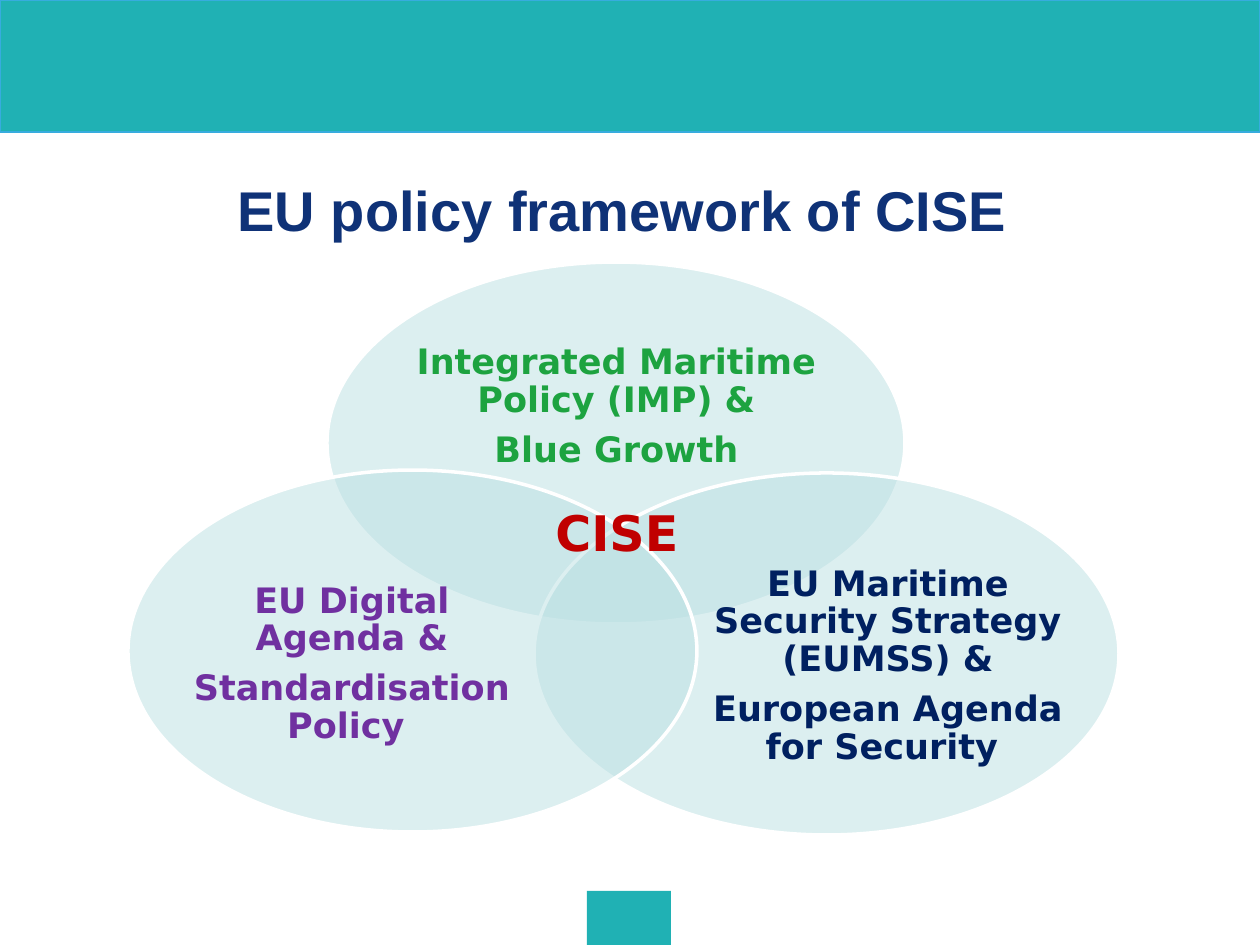
from dataclasses import dataclass

from lxml.etree import SubElement
from pptx import Presentation
from pptx.dml.color import RGBColor
from pptx.enum.shapes import MSO_SHAPE as Shape
from pptx.enum.text import MSO_ANCHOR as Anchor, PP_ALIGN as Align
from pptx.oxml.ns import qn
from pptx.util import Emu, Pt

EMU_PER_PX = 914400 / 126
TEAL = "20B1B4"
LABEL_FONT = "DejaVu Sans"


@dataclass(frozen=True)
class Box:
    left: int
    top: int
    width: int
    height: int

    def emu(self) -> tuple[Emu, ...]:
        return tuple(px(v) for v in (self.left, self.top, self.width, self.height))


@dataclass(frozen=True)
class Policy:
    ellipse: Box
    label: Box
    lines: tuple[str, ...]
    color: str


POLICIES = (
    Policy(Box(327, 262, 578, 362), Box(404, 326, 425, 163),
           ("Integrated Maritime Policy (IMP) &", "Blue Growth"), "1DA340"),
    Policy(Box(534, 473, 585, 362), Box(713, 567, 350, 199),
           ("EU Maritime Security Strategy (EUMSS) &", "European Agenda for Security "), "002060"),
    Policy(Box(128, 470, 569, 362), Box(181, 565, 342, 199),
           ("EU Digital Agenda &", "Standardisation Policy "), "7030A0"),
)


def px(n: int) -> Emu:
    return Emu(round(n * EMU_PER_PX))


def rgb(color: str) -> RGBColor:
    return RGBColor.from_string(color)


def style(p, font: str, size: int, color: str) -> None:
    for r in p.runs:
        r.font.name = font
        r.font.size = Pt(size)
        r.font.bold = True
        r.font.color.rgb = rgb(color)


def add_filled(s, kind: Shape, box: Box, fill: str, line: str = "", width: float = 0):
    sp = s.shapes.add_shape(kind, *box.emu())
    sp.shadow.inherit = False
    sp.fill.solid()
    sp.fill.fore_color.rgb = rgb(fill)
    if line:
        sp.line.color.rgb = rgb(line)
        sp.line.width = Pt(width)
    else:
        sp.line.fill.background()
    return sp


def add_title(s, box: Box, text: str) -> None:
    sp = s.shapes.title
    sp.left, sp.top, sp.width, sp.height = box.emu()
    tf = sp.text_frame
    tf.text = text
    tf.vertical_anchor = Anchor.MIDDLE
    p = tf.paragraphs[0]
    p.alignment = Align.LEFT
    pPr = p._p.get_or_add_pPr()
    pPr.set("marL", str(px(49)))
    pPr.set("indent", "0")
    style(p, "Arial", 32, "0F3277")


def add_policy(s, policy: Policy) -> None:
    sp = add_filled(s, Shape.OVAL, policy.ellipse, "BBE0E3", "FFFFFF", 2)
    color = sp.fill._xPr.find(qn("a:solidFill"))[0]
    SubElement(color, qn("a:alpha"), val="50000")
    tf = s.shapes.add_textbox(*policy.label.emu()).text_frame
    tf.word_wrap = True
    tf.vertical_anchor = Anchor.MIDDLE
    tf.margin_left = tf.margin_right = tf.margin_top = tf.margin_bottom = 0
    tf.text = "\n".join(policy.lines)
    for p in tf.paragraphs:
        p.alignment = Align.CENTER
        p.line_spacing = 0.9
        p.space_after = Pt(7)
        style(p, LABEL_FONT, 20, policy.color)


def add_center(s, box: Box, text: str) -> None:
    tf = s.shapes.add_textbox(*box.emu()).text_frame
    tf.word_wrap = True
    tf.text = text
    style(tf.paragraphs[0], LABEL_FONT, 28, "C00000")


def main() -> None:
    prs = Presentation()
    prs.slide_width, prs.slide_height = px(1260), px(945)
    s = prs.slides.add_slide(prs.slide_layouts[5])
    add_filled(s, Shape.RECTANGLE, Box(0, 0, 1260, 132), TEAL, "37ACDE", 0.75)
    add_filled(s, Shape.RECTANGLE, Box(587, 891, 84, 54), TEAL)
    add_title(s, Box(176, 183, 885, 53), "EU policy framework of CISE")
    for policy in POLICIES:
        add_policy(s, policy)
    add_center(s, Box(543, 496, 169, 72), "CISE")
    prs.save("out.pptx")


if __name__ == "__main__":
    main()
